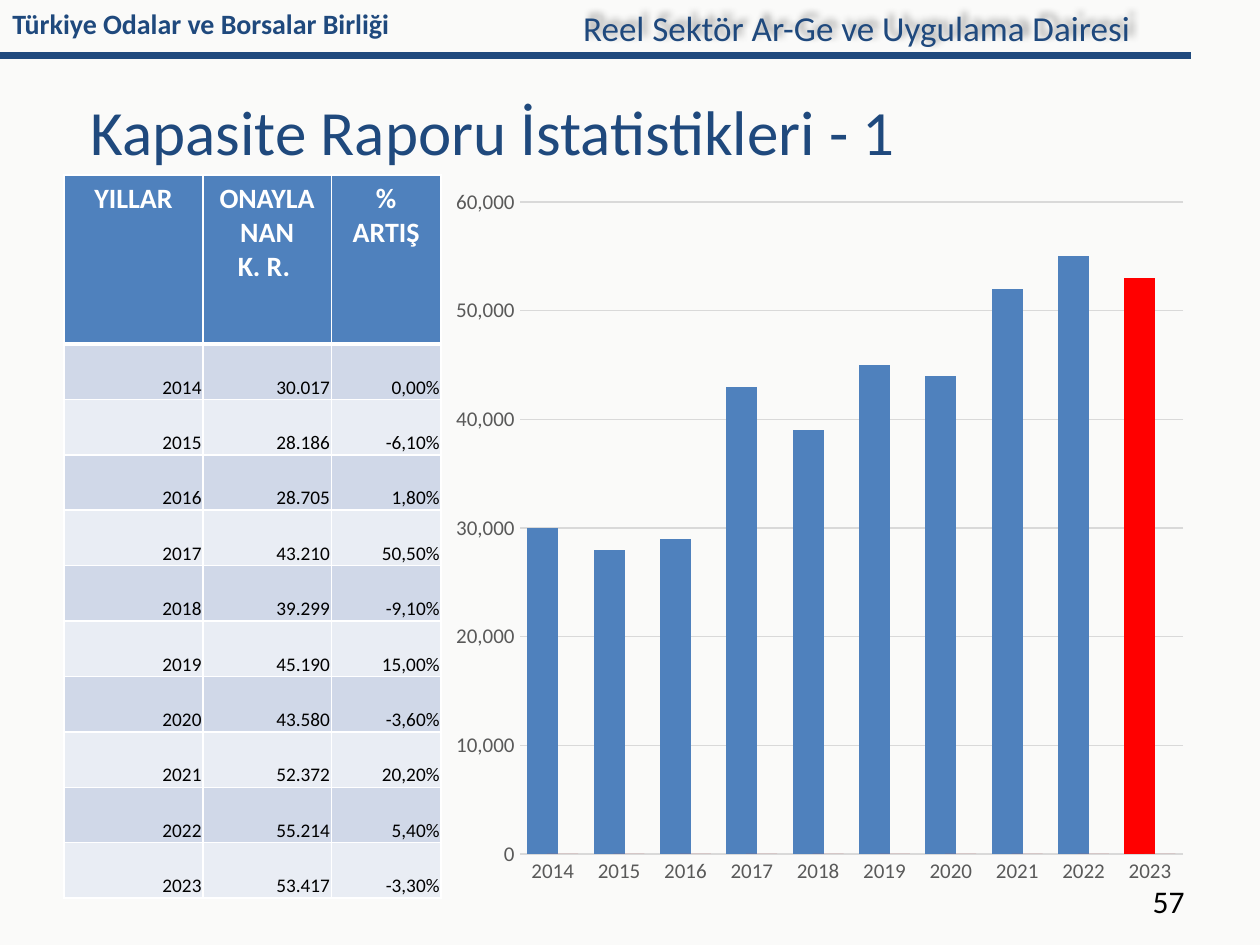
from lxml.etree import SubElement
from pptx import Presentation
from pptx.chart.data import CategoryChartData as ChartData
from pptx.dml.color import RGBColor as RGB
from pptx.enum.chart import XL_CHART_TYPE as Kind, XL_TICK_MARK as Tick
from pptx.enum.shapes import MSO_CONNECTOR as Link
from pptx.enum.text import MSO_ANCHOR as Anchor, PP_ALIGN as Align
from pptx.oxml import parse_xml
from pptx.oxml.ns import nsdecls, qn
from pptx.util import Inches, Pt

TITLE = "Kapasite Raporu İstatistikleri - 1"
LABELS = [  # text, box, style, alignment
    ("Türkiye Odalar ve Borsalar Birliği", (0, 0, 8.15, 0.37), "org", Align.LEFT),
    ("57", (7.17, 6.95, 2.33, 0.4), "page", Align.RIGHT),
    ("Reel Sektör Ar-Ge ve Uygulama Dairesi", (4.53, 0, 6.18, 0.44), "unit", Align.LEFT),
]
HEADS = ["YILLAR", "ONAYLANAN\nK. R. ", "% ARTIŞ"]
ROWS = [
    ("2014", 30017, "0,00%"), ("2015", 28186, "-6,10%"),
    ("2016", 28705, "1,80%"), ("2017", 43210, "50,50%"),
    ("2018", 39299, "-9,10%"), ("2019", 45190, "15,00%"),
    ("2020", 43580, "-3,60%"), ("2021", 52372, "20,20%"),
    ("2022", 55214, "5,40%"), ("2023", 53417, "-3,30%"),
]
COLS = [1.1, 1.02, 0.87]
HEAD_H, ROW_H = 1.34, 0.44
LEFT, TOP, HIGH = 0.51, 1.39, 5.74

THEME = {
    "font": "Calibri", "page": "FAFAF9", "navy": "1F497D", "blue": "4F81BD",
    "red": "FF0000", "brick": "C0504D", "grid": "D9D9D9", "edge": "FFFFFF",
    "bands": ["D0D8E8", "E9EDF4"],
    "text": {  # size, colour, bold
        "title": (36, "1F497D", False), "org": (16, "1F497D", True),
        "unit": (20, "1F497D", False), "page": (18, "000000", False),
        "head": (16, "FFFFFF", True), "cell": (11, "000000", False),
        "chart": (10, "000000", False), "axis": (12, "595959", False),
    },
}


def rgb(name):
    return RGB.from_string(THEME.get(name, name))


def put(obj, **vals):
    for key, val in vals.items():
        setattr(obj, key, val)


def style(font, name):
    size, tint, bold = THEME["text"][name]
    put(font, name=THEME["font"], size=Pt(size), bold=bold)
    font.color.rgb = rgb(tint)


def write(frame, text, name, align):
    frame.text = text
    for para in frame.paragraphs:
        para.alignment = align
        for run in para.runs:
            style(run.font, name)


def paint(fill, name):
    fill.solid()
    fill.fore_color.rgb = rgb(name)


def stroke(line, name, width):
    line.color.rgb = rgb(name)
    line.width = Pt(width)


def blur(shape):
    """Give an unfilled box a soft shadow, cast by its letters up and to the right."""
    shape._element.spPr.append(parse_xml(
        f'<a:effectLst {nsdecls("a")}><a:outerShdw blurRad="50800" dist="50800"'
        ' dir="18900000" algn="bl" rotWithShape="0"><a:srgbClr val="000000">'
        '<a:alpha val="40000"/></a:srgbClr></a:outerShdw></a:effectLst>'))


def border(cell, base):
    props = cell._tc.get_or_add_tcPr()
    for side in "LRTB":
        width = base if side == "B" else 1
        line = SubElement(props, qn(f"a:ln{side}"), w=str(Pt(width)))
        fill = SubElement(line, qn("a:solidFill"))
        SubElement(fill, qn("a:srgbClr"), val=THEME["edge"])


def add_labels(slide):
    for text, box, name, align in LABELS:
        label = slide.shapes.add_textbox(*map(Inches, box))
        label.text_frame.word_wrap = True
        write(label.text_frame, text, name, align)
        if name == "unit":
            blur(label)


def add_title(slide):
    title = slide.shapes.title
    put(title, left=Inches(LEFT), top=Inches(0.68), width=Inches(9), height=Inches(0.71))
    put(title.text_frame, vertical_anchor=Anchor.MIDDLE, margin_left=Inches(0.21))
    write(title.text_frame, TITLE, "title", Align.LEFT)


def add_rule(slide):
    y = Inches(0.44)
    rule = slide.shapes.add_connector(Link.STRAIGHT, 0, y, Inches(9.45), y)
    stroke(rule.line, "navy", 4)
    SubElement(rule._element.spPr, qn("a:effectLst"))


def add_grid(slide):
    box = map(Inches, (LEFT, TOP, sum(COLS), HIGH))
    table = slide.shapes.add_table(len(ROWS) + 1, len(COLS), *box).table
    for col, width in zip(table.columns, COLS):
        col.width = Inches(width)
    body = [(year, f"{count:,}".replace(",", "."), rise) for year, count, rise in ROWS]
    thin = Inches(0.01)
    for r, texts in enumerate([HEADS] + body):
        table.rows[r].height = Inches(ROW_H if r else HEAD_H)
        for c, text in enumerate(texts):
            cell = table.cell(r, c)
            border(cell, 1 if r else 3)
            paint(cell.fill, THEME["bands"][(r - 1) % 2] if r else "blue")
            if r:
                put(cell, vertical_anchor=Anchor.BOTTOM, margin_left=thin,
                    margin_right=thin, margin_top=thin, margin_bottom=0)
            write(cell.text_frame, text, "cell" if r else "head",
                  Align.RIGHT if r else Align.CENTER)


def add_bars(slide):
    data = ChartData(number_format="#,##0")
    data.categories = [row[0] for row in ROWS]
    data.add_series("Series 1", [round(row[1], -3) for row in ROWS])
    data.add_series("Series 2", [0] * len(ROWS))
    box = map(Inches, (LEFT + sum(COLS), TOP, 6.01, HIGH))
    chart = slide.shapes.add_chart(Kind.COLUMN_CLUSTERED, *box, data).chart
    put(chart, has_legend=False, has_title=False)
    style(chart.font, "chart")
    plot = chart.plots[0]
    put(plot, gap_width=50, overlap=36, vary_by_categories=False)
    for series, tint in zip(plot.series, ("blue", "brick")):
        series.invert_if_negative = False
        paint(series.format.fill, tint)
    paint(plot.series[0].points[len(ROWS) - 1].format.fill, "red")
    years, counts = chart.category_axis, chart.value_axis
    for axis in (years, counts):
        put(axis, major_tick_mark=Tick.NONE, minor_tick_mark=Tick.NONE)
        style(axis.tick_labels.font, "axis")
    stroke(years.format.line, "grid", 0.75)
    put(counts, minimum_scale=0, maximum_scale=60000, major_unit=10000)
    put(counts.tick_labels, number_format="#,##0", number_format_is_linked=False)
    counts.format.line.fill.background()
    stroke(counts.major_gridlines.format.line, "grid", 0.75)


def main():
    deck = Presentation()
    put(deck, slide_width=Inches(10), slide_height=Inches(7.5))
    slide = deck.slides.add_slide(deck.slide_layouts[5])
    paint(slide.background.fill, "page")
    for add in (add_rule, add_title, add_labels, add_grid, add_bars):
        add(slide)
    deck.save("out.pptx")


if __name__ == "__main__":
    main()
